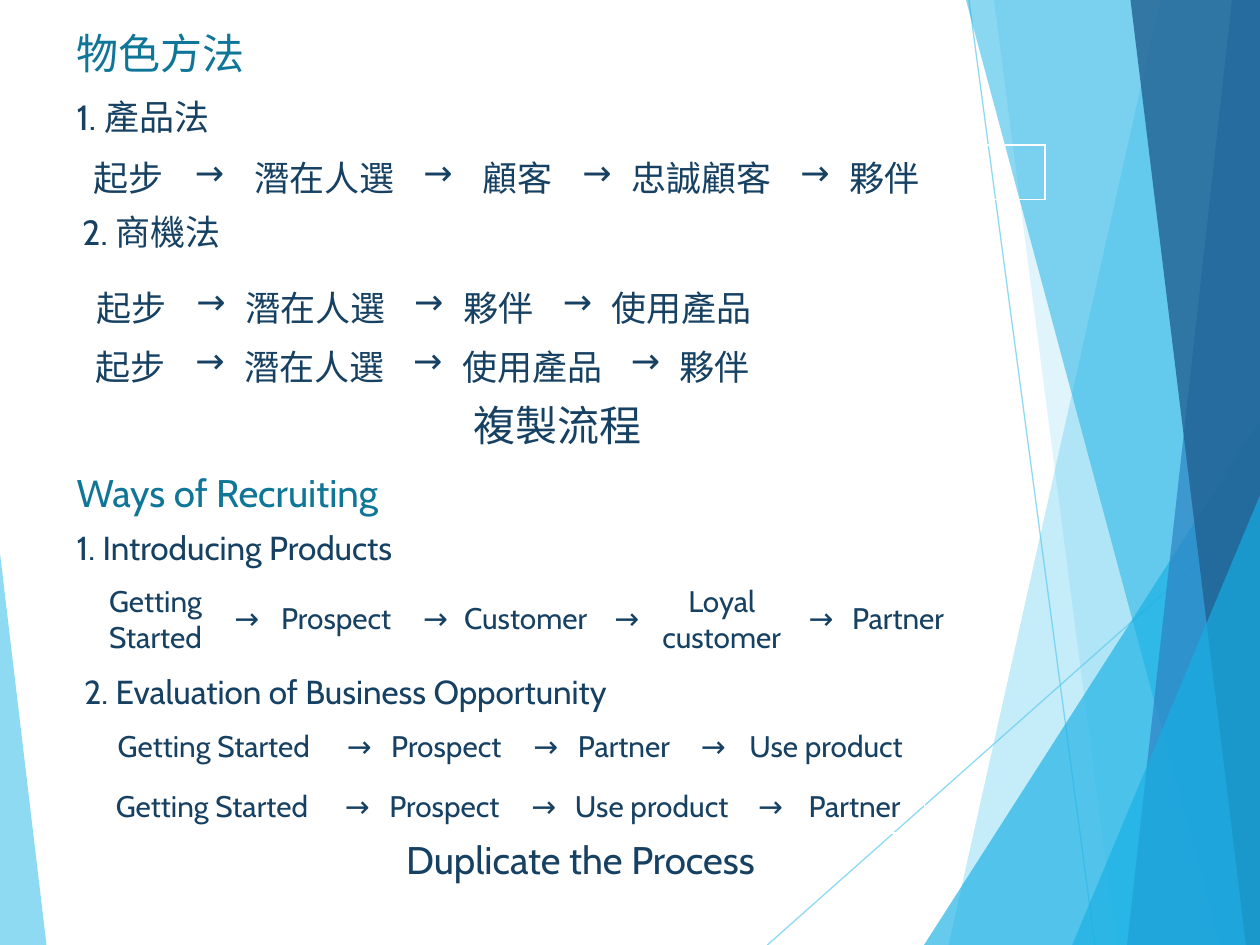
from lxml import etree
from pptx import Presentation
from pptx.dml.color import RGBColor
from pptx.enum.shapes import MSO_CONNECTOR, MSO_SHAPE
from pptx.enum.text import MSO_ANCHOR, MSO_AUTO_SIZE, PP_ALIGN
from pptx.oxml.ns import qn
from pptx.util import Pt

LINE = MSO_CONNECTOR.STRAIGHT
TRIANGLE = MSO_SHAPE.ISOSCELES_TRIANGLE
MIDDLE = MSO_ANCHOR.MIDDLE
GROW = MSO_AUTO_SIZE.SHAPE_TO_FIT_TEXT
LEFT, CENTER = PP_ALIGN.LEFT, PP_ALIGN.CENTER

W, H = 720, 540
FONT = "Cabin"
ARROW = "→"
COLORS = {"sky": "5FCBEF", "cyan": "17B0E4", "blue": "2E83C3",
          "navy": "226292", "title": "0F7698", "text": "174162"}

RAYS = [(553.7, 0, 625.7, H), (W, 290.2, 438.5, H)]

# kind, geometry, colour, opacity: bands give top and bottom x of their left edge
FACETS = [
    ("band", (663, 542), "sky", 36),
    ("band", (567.5, 638.5), "sky", 20),
    ("triangle", (528, 240, 192, 300, 1), "cyan", 66),
    ("band", (551.5, 697), "cyan", 50),
    ("band", (704, 643.5), "blue", 70),
    ("band", (646, 711.5), "navy", 80),
    ("triangle", (612.7, 283, 107.3, 257, 1), "cyan", 66),
    ("triangle", (0, 316, 26.6, 224, 0), "sky", 70),
]

LABELS = [
    ("物色方法", (36.7, 12.2, 482, 36), 24, "title", True),
    ("Ways of Recruiting", (36.7, 264.2, 556, 34), 22, "title", True),
    ("1. 產品法", (36.7, 51, 99.5, 31.5), 20, "text", False),
    ("2. 商機法", (39.9, 116.8, 99.5, 31.5), 20, "text", False),
    ("複製流程", (263.5, 224.5, 111.5, 36), 24, "text", False),
    ("1. Introducing Products", (36.7, 298, 214.5, 30.5), 19, "text", False),
    ("2. Evaluation of Business Opportunity", (41, 380, 336, 30.5), 19, "text", False),
    ("Duplicate the Process", (225, 474, 228, 34), 22, "text", False),
]

CHAINS = [
    (["起步", "潛在人選", "顧客", "忠誠顧客", "夥伴"], (46.2, 82.8), 31,
     [58, 34, 96.5, 34, 57, 28, 96.5, 28, 119], 20, LEFT),
    (["起步", "潛在人選", "夥伴", "使用產品"], (48, 156.8), 31,
     [57, 28, 96.5, 28, 57, 28, 225], 20, LEFT),
    (["起步", "潛在人選", "使用產品", "夥伴"], (47.4, 190.6), 31,
     [57, 28, 96.5, 28, 96.5, 28, 186], 20, LEFT),
    (["Getting Started", "Prospect", "Customer", "Loyal customer", "Partner"],
     (51.1, 329.8), 48, [75.6, 23, 85, 22.3, 87, 26, 85, 22.3, 72], 17, CENTER),
    (["Getting Started", "Prospect", "Partner", "Use product"], (53.5, 411.8), 29.5,
     [137.5, 21.6, 85, 22.3, 73.5, 22.3, 113], 17, CENTER),
    (["Getting Started", "Prospect", "Use product", "Partner"], (52.4, 446.4), 29.5,
     [137.5, 21.6, 85, 22.3, 107.3, 22.3, 80], 17, CENTER),
]


def pts(*values):
    return [Pt(v) for v in values]


def rgb(name):
    return RGBColor.from_string(COLORS[name])


def write(tf, text, size=20, color="text", align=LEFT):
    p = tf.paragraphs[0]
    p.alignment = align
    r = p.add_run()
    r.text = text
    r.font.name = FONT
    r.font.size = Pt(size)
    r.font.bold = False
    r.font.color.rgb = rgb(color)


def paint(fill, s, color, opacity):
    fill.solid()
    fill.fore_color.rgb = rgb(color)
    clr = next(s._element.spPr.iter(qn("a:srgbClr")))
    etree.SubElement(clr, qn("a:alpha")).set("val", str(opacity * 1000))


def add_ray(shapes, ends):
    s = shapes.add_connector(LINE, *pts(*ends))
    s.line.width = Pt(0.75)
    paint(s.line.fill, s, "sky", 70)
    etree.SubElement(s._element.spPr, qn("a:effectLst"))


def add_facet(shapes, kind, geometry, color, opacity):
    if kind == "band":
        top, bottom = geometry
        builder = shapes.build_freeform(top, 0, scale=Pt(1))
        builder.add_line_segments([(W, 0), (W, H), (bottom, H)], close=True)
        s = builder.convert_to_shape()
    else:
        *box, apex = geometry
        s = shapes.add_shape(TRIANGLE, *pts(*box))
        s.adjustments[0] = apex
    s.shadow.inherit = False
    paint(s.fill, s, color, opacity)
    s.line.fill.background()


def add_label(shapes, text, box, size, color, wrap):
    tf = shapes.add_textbox(*pts(*box)).text_frame
    tf.word_wrap = wrap
    tf.auto_size = GROW
    write(tf, text, size=size, color=color)


def add_chain(shapes, steps, origin, height, widths, size, align):
    cells = [ARROW] * len(widths)
    cells[::2] = steps
    box = pts(*origin, sum(widths), height)
    table = shapes.add_table(1, len(cells), *box).table
    table.first_row = table.horz_banding = False
    for i, (text, width) in enumerate(zip(cells, widths)):
        table.columns[i].width = Pt(width)
        cell = table.cell(0, i)
        cell.fill.background()
        cell.vertical_anchor = MIDDLE
        write(cell.text_frame, text, size=size, align=align)


def main():
    prs = Presentation()
    prs.slide_width, prs.slide_height = pts(W, H)
    shapes = prs.slides.add_slide(prs.slide_layouts[6]).shapes
    for ends in RAYS:
        add_ray(shapes, ends)
    for facet in FACETS:
        add_facet(shapes, *facet)
    for label in LABELS:
        add_label(shapes, *label)
    for chain in CHAINS:
        add_chain(shapes, *chain)
    prs.save("out.pptx")


if __name__ == "__main__":
    main()
